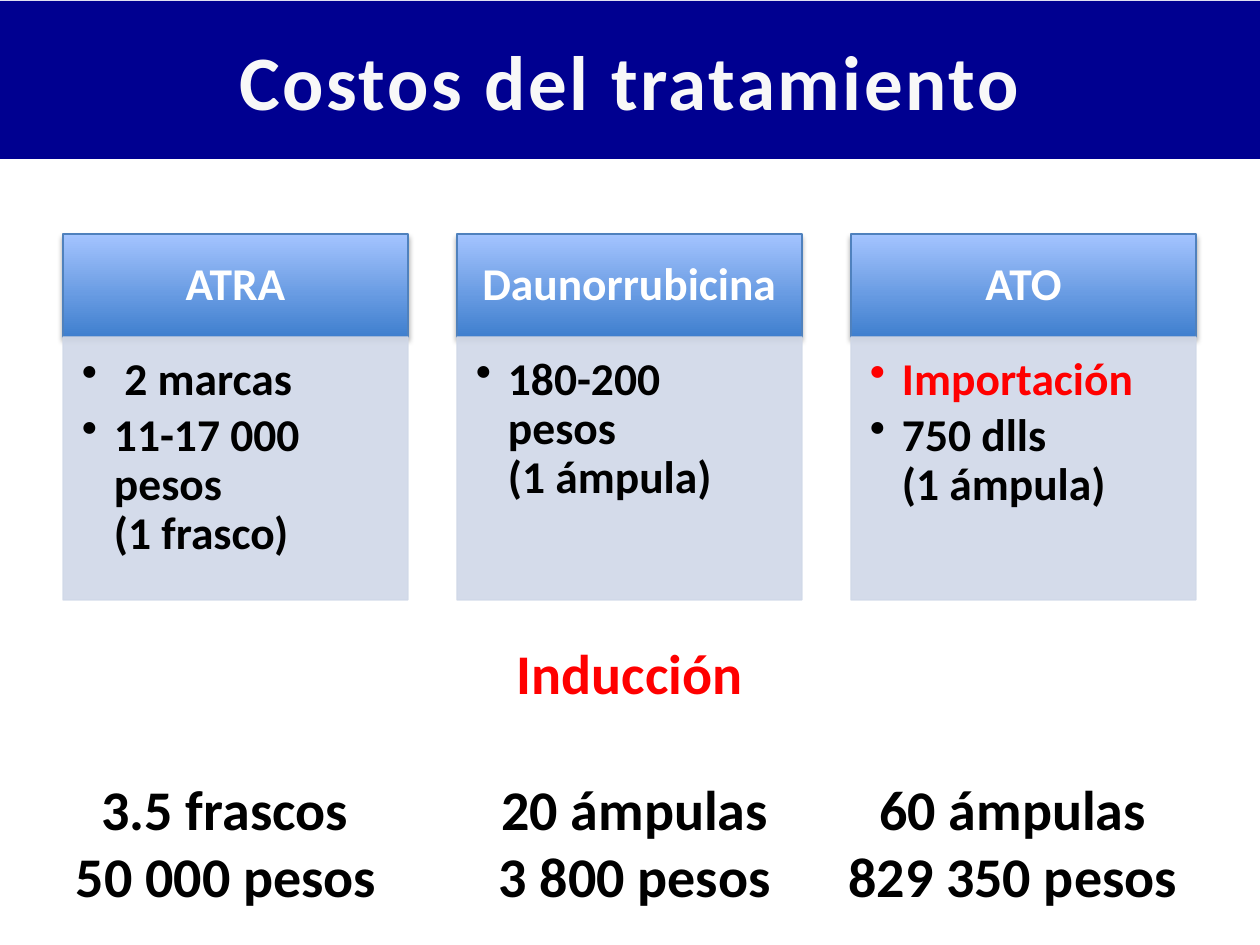
from dataclasses import dataclass

from lxml.etree import SubElement
from pptx import Presentation
from pptx.dml.color import RGBColor
from pptx.enum.shapes import MSO_SHAPE as SHAPE
from pptx.enum.text import MSO_ANCHOR as ANCHOR, PP_ALIGN as ALIGN
from pptx.oxml.ns import qn
from pptx.util import Emu, Pt

PX = 914400 // 126


@dataclass(frozen=True)
class Theme:
    """Colours and type sizes of the slide."""
    font: str = "Calibri"
    navy: str = "000090"
    title: str = "F8F8F8"
    white: str = "FFFFFF"
    black: str = "000000"
    red: str = "FF0000"
    top: str = "A4C4FF"
    bottom: str = "3F7FCE"
    edge: str = "4F81BD"
    panel: str = "D0D8E8"
    title_pt: int = 44
    card_pt: int = 26
    total_pt: int = 32


T = Theme()
CARDS = [
    ("ATRA", [(" 2 marcas", T.black), ("11-17 000\vpesos\v(1 frasco)", T.black)]),
    ("Daunorrubicina", [("180-200\vpesos\v(1 ámpula)", T.black)]),
    ("ATO", [("Importación", T.red), ("750 dlls\v(1 ámpula)", T.black)]),
]
TOTALS = [
    ("3.5 frascos", "20 ámpulas", "60 ámpulas"),
    ("50 000 pesos", "3 800 pesos", "829 350 pesos"),
]
TOTAL_TABS = (149, 559, 937)


def px(n):
    """Turn pixels into EMU."""
    return Emu(n * PX)


def rgb(c):
    """Turn a hex string into a colour."""
    return RGBColor.from_string(c)


def child(parent, tag, **attrs):
    """Append an XML child with attributes."""
    return SubElement(parent, qn(tag), {k: str(v) for k, v in attrs.items()})


def frame(s, margins, anchor=ANCHOR.TOP):
    """Prepare the text frame of a shape."""
    tf = s.text_frame
    tf.word_wrap = True
    tf.vertical_anchor = anchor
    tf.margin_left, tf.margin_top, tf.margin_right, tf.margin_bottom = map(px, margins)
    return tf


def write(tf, text, size, color, align=ALIGN.LEFT, line=None, before=0, after=0,
          spacing=0, bullet=False, tabs=()):
    """Write one formatted paragraph in a text frame."""
    p = tf.paragraphs[0] if not tf.text else tf.add_paragraph()
    p.text = text
    p.alignment, p.line_spacing = align, line
    p.space_before, p.space_after = Pt(before), Pt(after)
    pPr = p._p.get_or_add_pPr()
    if bullet:
        indent = px(32)
        pPr.set("marL", str(indent))
        pPr.set("indent", str(-indent))
        child(pPr, "a:buChar", char="•")
    if tabs:
        tab_list = child(pPr, "a:tabLst")
        for x in tabs:
            child(tab_list, "a:tab", pos=px(x), algn="ctr")
    for r in p.runs:
        r.font.name, r.font.size, r.font.bold = T.font, Pt(size), True
        r.font.color.rgb = rgb(color)
        if spacing:
            r._r.get_or_add_rPr().set("spc", str(spacing))


def rect(slide, x, y, w, h, fill, line=None):
    """Draw a plain rectangle."""
    s = slide.shapes.add_shape(SHAPE.RECTANGLE, px(x), px(y), px(w), px(h))
    s.shadow.inherit = False
    s.fill.solid()
    s.fill.fore_color.rgb = rgb(fill)
    if line:
        s.line.color.rgb = rgb(line)
        s.line.width = Pt(0.75)
    else:
        s.line.fill.background()
    return s


def shade(s):
    """Give a shape the header gradient and a soft shadow."""
    s.fill.gradient()
    s.fill.gradient_angle = 90
    for stop, color in zip(s.fill.gradient_stops, (T.bottom, T.top)):
        stop.color.rgb = rgb(color)
    effects = s._element.spPr.find(qn("a:effectLst"))
    shadow = child(effects, "a:outerShdw", blurRad=Pt(3.1), dist=Pt(1.8),
                   dir=5400000, rotWithShape=0)
    child(child(shadow, "a:srgbClr", val=T.black), "a:alpha", val=35000)


def title(slide, text):
    """Draw the title band."""
    s = rect(slide, 0, 1, 1260, 158, T.navy)
    write(frame(s, (13, 6, 13, 6), ANCHOR.MIDDLE), text, T.title_pt, T.title,
          align=ALIGN.CENTER, spacing=150)


def card(slide, x, head, items):
    """Draw one drug card with its header and bullets."""
    s = rect(slide, x, 234, 345, 103, T.bottom, T.edge)
    shade(s)
    write(frame(s, (13, 15, 13, 15), ANCHOR.MIDDLE), head, T.card_pt, T.white,
          align=ALIGN.CENTER, line=0.9)
    s = rect(slide, x, 337, 345, 263, T.panel, T.panel)
    for color in s._element.spPr.iter(qn("a:srgbClr")):
        child(color, "a:alpha", val=90000)
    tf = frame(s, (19, 19, 25, 29))
    for text, color in items:
        write(tf, text, T.card_pt, color, line=0.9, after=4, bullet=True)


def totals(slide, head, rows):
    """Write the induction totals in centred columns."""
    s = slide.shapes.add_textbox(px(63), px(633), px(1134), px(285))
    tf = frame(s, (13, 6, 13, 6))
    write(tf, head, T.total_pt, T.red, align=ALIGN.CENTER)
    for i, row in enumerate(rows):
        write(tf, "".join("\t" + cell for cell in row), T.total_pt, T.black,
              before=0 if i else 39, tabs=TOTAL_TABS)


def main():
    """Build and save the slide."""
    prs = Presentation()
    prs.slide_width, prs.slide_height = px(1260), px(945)
    slide = prs.slides.add_slide(prs.slide_layouts[6])
    title(slide, "Costos del tratamiento")
    for i, (head, items) in enumerate(CARDS):
        card(slide, 63 + 394 * i, head, items)
    totals(slide, "Inducción", TOTALS)
    prs.save("out.pptx")


if __name__ == "__main__":
    main()
